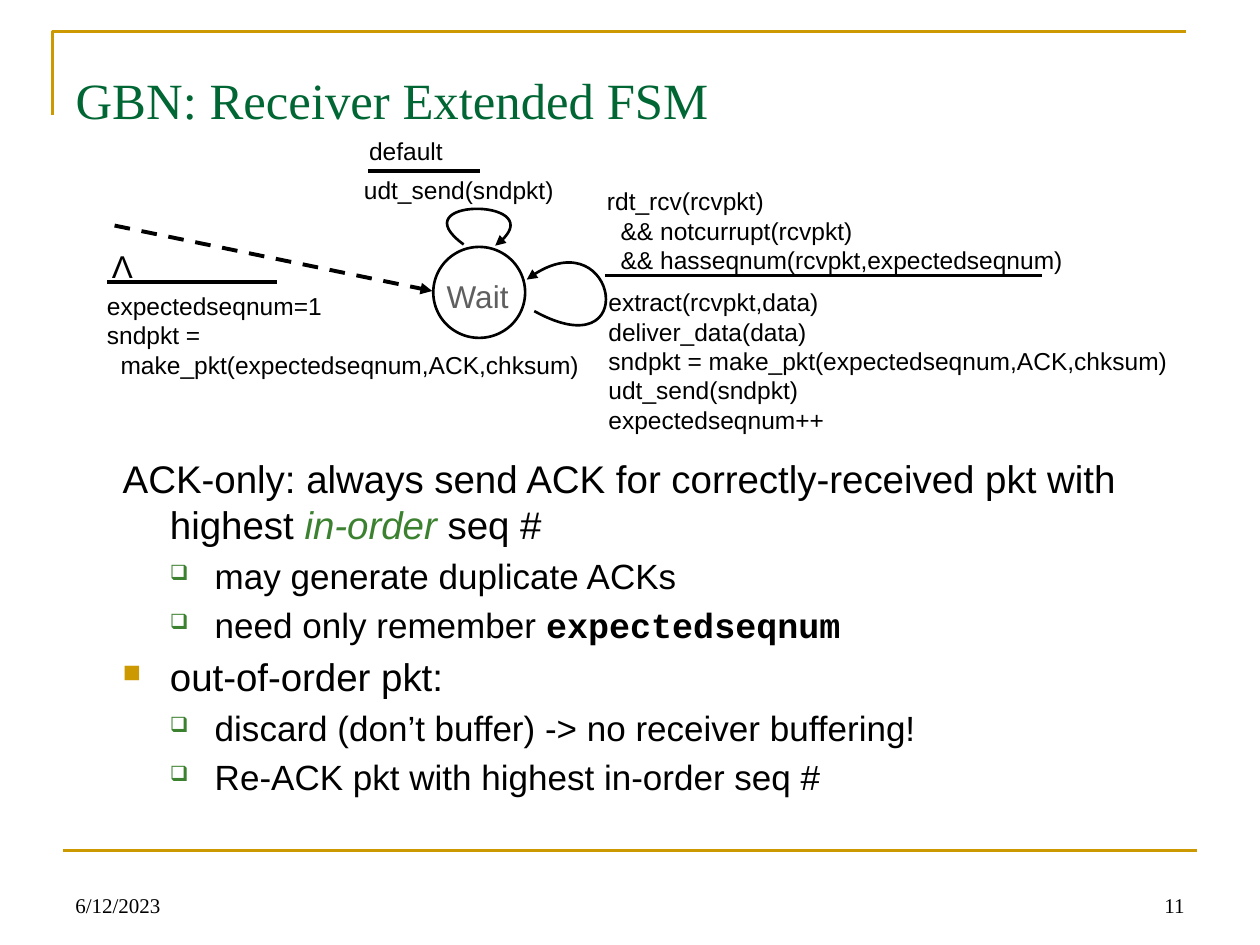
from lxml import etree
from pptx import Presentation
from pptx import util as u
from pptx.dml.color import RGBColor
from pptx.enum import dml, shapes, text
from pptx.oxml.ns import qn

GOLD, GREEN, LEAF, BLACK, GREY = "CC9900", "006633", "3B812F", "000000", "5F5F5F"
SERIF, SANS, MONO = "Times New Roman", "Arial", "Courier New"
ALIGN = text.PP_ALIGN
ANCHOR = text.MSO_ANCHOR


def rgb(value):
    """Turn a hex string into a colour."""
    return RGBColor.from_string(value)


def pts(*values):
    """Turn numbers of points into lengths."""
    return [u.Pt(v) for v in values]


def add_run(p, content, size=14, font=SANS, color=BLACK, bold=False, italic=False):
    """Append a formatted run to a paragraph."""
    r = p.add_run()
    r.text = content
    r.font.size, r.font.name = u.Pt(size), font
    r.font.bold, r.font.italic = bold, italic
    r.font.color.rgb = rgb(color)


def add_text(slide, content, box, align=ALIGN.LEFT, anchor=ANCHOR.TOP, wrap=True, **fmt):
    """Add a text box with one paragraph per line of content."""
    tf = slide.shapes.add_textbox(*pts(*box)).text_frame
    tf.word_wrap, tf.vertical_anchor = wrap, anchor
    for i, line in enumerate(content.split("\n")):
        p = tf.add_paragraph() if i else tf.paragraphs[0]
        p.alignment = align
        add_run(p, line, **fmt)


def style_line(sp, color, width, arrow=False, dashed=False):
    """Format a line, without a shadow, with an optional arrowhead."""
    sp.line.color.rgb, sp.line.width = rgb(color), u.Pt(width)
    if dashed:
        sp.line.dash_style = dml.MSO_LINE.DASH
    if arrow:
        ln = sp.line._get_or_add_ln()
        etree.SubElement(ln, qn("a:tailEnd"), type="triangle")


def add_line(slide, start, end, color=BLACK, width=2.25, **style):
    """Add a straight connector."""
    sp = slide.shapes.add_connector(shapes.MSO_CONNECTOR.STRAIGHT, *pts(*start, *end))
    style_line(sp, color, width, **style)
    etree.SubElement(sp._element.spPr, qn("a:effectLst"))


def add_outline(slide, points, color=BLACK, width=1.5, **style):
    """Add an open, unfilled polyline."""
    start, *rest = [pts(*xy) for xy in points]
    builder = slide.shapes.build_freeform(*start)
    builder.add_line_segments(rest, close=False)
    sp = builder.convert_to_shape()
    sp.fill.background()
    sp.shadow.inherit = False
    style_line(sp, color, width, **style)
    return sp


def add_loop(slide, points):
    """Add a cubic curve with an arrowhead from start, two controls and end."""
    sp = add_outline(slide, points, arrow=True)
    first, *rest = sp._element.findall(".//" + qn("a:lnTo"))
    curve = etree.Element(qn("a:cubicBezTo"))
    first.addprevious(curve)
    for segment in [first, *rest]:
        curve.append(segment[0])
        segment.getparent().remove(segment)


def add_state(slide, label):
    """Add the state circle and its label."""
    sp = slide.shapes.add_shape(shapes.MSO_SHAPE.OVAL, *pts(247.6, 141.1, 52.5, 52))
    sp.shadow.inherit = False
    sp.fill.solid()
    sp.fill.fore_color.rgb = rgb("FFFFFF")
    style_line(sp, BLACK, 1.5)
    add_text(slide, label, (241.2, 154.8, 63.4, 18.7), ALIGN.CENTER, size=18, color=GREY)


def set_bullet(p, left, hanging, char=None, color=None, percent=None):
    """Set the indents of a paragraph and its bullet, if any."""
    pPr = p._p.get_or_add_pPr()
    pPr.set("marL", str(u.Pt(left)))
    pPr.set("indent", str(-u.Pt(hanging)))
    if char:
        clr = etree.SubElement(pPr, qn("a:buClr"))
        etree.SubElement(clr, qn("a:srgbClr"), val=color)
        etree.SubElement(pPr, qn("a:buSzPct"), val=str(percent * 1000))
        etree.SubElement(pPr, qn("a:buChar"), char=char)
    else:
        etree.SubElement(pPr, qn("a:buNone"))


def add_body(slide, items):
    """Add the explanation as (kind, runs) paragraphs."""
    kinds = {
        "plain": (22, (27, 27)),
        "main": (22, (27, 27, "■", GOLD, 65)),
        "sub": (20, (52.6, 25.6, "❑", LEAF, 60)),
    }
    tf = slide.shapes.add_textbox(*pts(63, 256.5, 641.5, 224.6)).text_frame
    tf.word_wrap = True
    for i, (kind, runs) in enumerate(items):
        size, bullet = kinds[kind]
        p = tf.add_paragraph() if i else tf.paragraphs[0]
        p.level = int(kind == "sub")
        p.space_before = u.Pt(size * 0.2)
        set_bullet(p, *bullet)
        for content, fmt in runs:
            add_run(p, content, size=size, **fmt)


def add_title(slide, content):
    """Place and format the title placeholder."""
    sp = slide.shapes.title
    sp.left, sp.top, sp.width, sp.height = pts(36, 21.6, 648, 70)
    tf = sp.text_frame
    tf.vertical_anchor = ANCHOR.MIDDLE
    tf.paragraphs[0].alignment = ALIGN.LEFT
    add_run(tf.paragraphs[0], content, size=29, font=SERIF, color=GREEN)


def add_fsm(slide):
    """Draw the receiver's state machine."""
    add_state(slide, "Wait")
    add_line(slide, (65.5, 128.9), (247, 166.3), arrow=True, dashed=True)
    add_text(slide, "udt_send(sndpkt)", (200.9, 96.5, 127.4, 24.5))
    add_text(slide, "default", (203.8, 74.2, 56.9, 19.4))
    add_line(slide, (210.2, 97.9), (274.3, 97.9))
    add_loop(slide, [(305.3, 177.8), (366.5, 211.7), (352.1, 121), (301, 159.8)])
    add_text(slide, "rdt_rcv(rcvpkt)\n  && notcurrupt(rcvpkt)\n"
             "  && hasseqnum(rcvpkt,expectedseqnum)", (339.8, 103, 280.8, 44.6))
    add_line(slide, (345.6, 157.4), (595.4, 157.4), width=1.5)
    add_text(slide, "extract(rcvpkt,data)\ndeliver_data(data)\n"
             "sndpkt = make_pkt(expectedseqnum,ACK,chksum)\n"
             "udt_send(sndpkt)\nexpectedseqnum++", (340.6, 160.6, 339.8, 67.7))
    add_loop(slide, [(265, 139.7), (228.2, 113), (319.7, 113), (283, 140.4)])
    add_line(slide, (61.2, 161.3), (158.4, 161.3))
    add_text(slide, "expectedseqnum=1\nsndpkt =\n"
             "  make_pkt(expectedseqnum,ACK,chksum)", (54, 162.7, 286.6, 77))
    add_text(slide, "Λ", (56.9, 137.5, 25.2, 26.6), ALIGN.CENTER, wrap=False, size=18)


def main():
    """Build the slide and save it."""
    prs = Presentation()
    prs.slide_width, prs.slide_height = pts(720, 540)
    slide = prs.slides.add_slide(prs.slide_layouts[5])
    add_outline(slide, [(30, 66), (30, 18), (678, 18)], GOLD)
    add_line(slide, (36, 486), (684, 486), GOLD, 1.5)
    add_title(slide, "GBN: Receiver Extended FSM")
    add_body(slide, [
        ("plain", [("ACK-only: always send ACK for correctly-received pkt with highest ", {}),
                   ("in-order", {"color": LEAF, "italic": True}), (" seq #", {})]),
        ("sub", [("may generate duplicate ACKs", {})]),
        ("sub", [("need only remember ", {}),
                 ("expectedseqnum", {"font": MONO, "bold": True})]),
        ("main", [("out-of-order pkt:", {})]),
        ("sub", [("discard (don’t buffer) -> no receiver buffering!", {})]),
        ("sub", [("Re-ACK pkt with highest in-order seq #", {})]),
    ])
    add_fsm(slide)
    footer = {"anchor": ANCHOR.BOTTOM, "size": 12, "font": SERIF}
    add_text(slide, "6/12/2023", (36, 492, 168, 36), **footer)
    add_text(slide, "11", (516, 492, 168, 36), ALIGN.RIGHT, **footer)
    prs.save("out.pptx")


if __name__ == "__main__":
    main()
